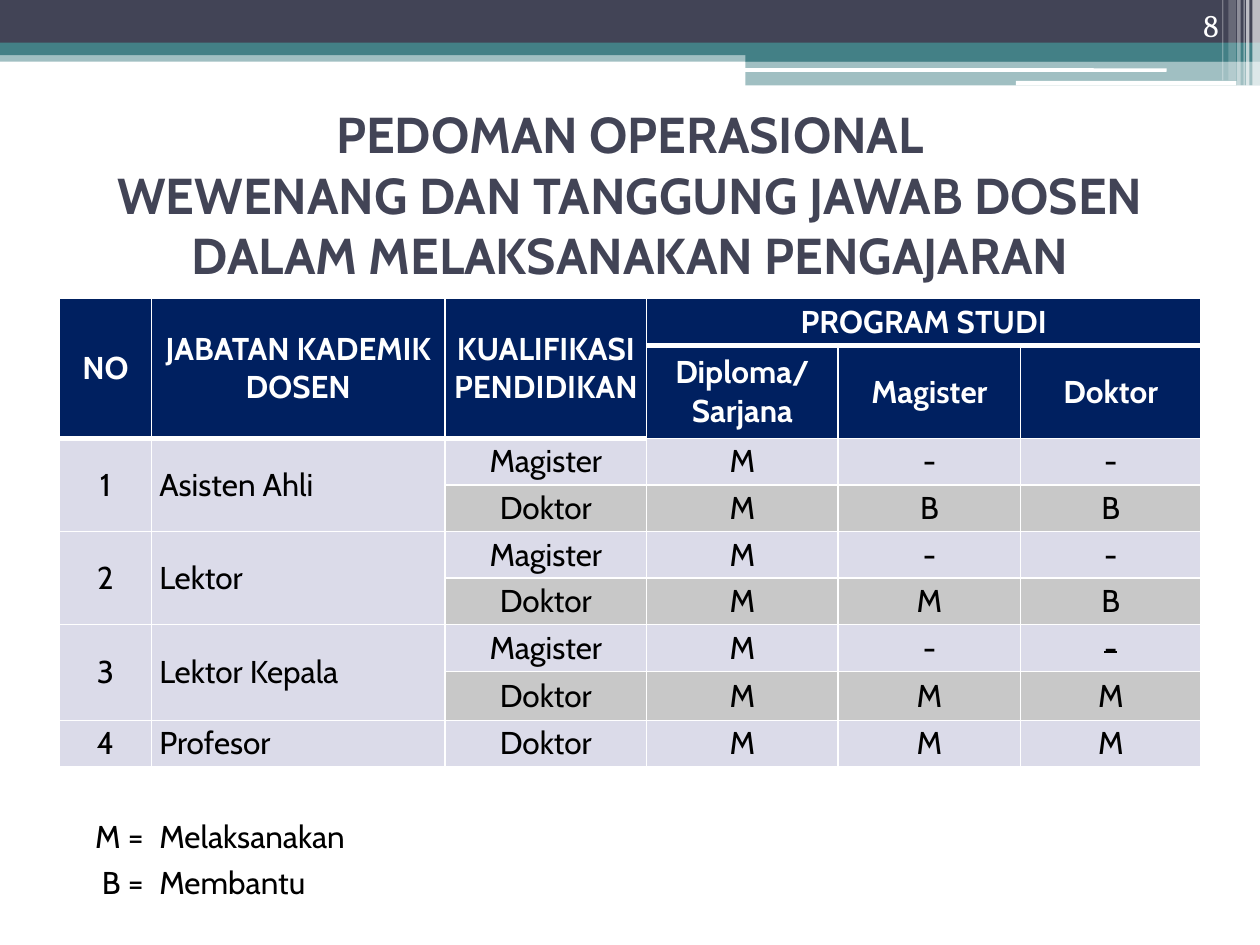
from lxml.etree import SubElement
from pptx import Presentation
from pptx.dml.color import RGBColor
from pptx.enum.shapes import MSO_SHAPE as Shape
from pptx.enum.text import MSO_ANCHOR as Anchor, PP_ALIGN as Align
from pptx.oxml.ns import qn
from pptx.util import Pt

WHITE, NAVY, LILAC, GREY = "FFFFFF", "002060", "DBDBE9", "C8C8C8"
SLATE, TEAL, BLACK = "424456", "438086", "000000"

TITLE = ("PEDOMAN OPERASIONAL\v"
         "WEWENANG DAN TANGGUNG JAWAB DOSEN DALAM MELAKSANAKAN PENGAJARAN")
PAGE_NUMBER = "8"
HEADINGS = ["NO", "JABATAN KADEMIK DOSEN", "KUALIFIKASI PENDIDIKAN"]
PROGRAM_HEADING = "PROGRAM STUDI"
PROGRAMS = ["Diploma/\nSarjana", "Magister", "Doktor"]
POSITIONS = [
    ("Asisten Ahli", [("Magister", "M", "-", "-"), ("Doktor", "M", "B", "B")]),
    ("Lektor", [("Magister", "M", "-", "-"), ("Doktor", "M", "M", "B")]),
    ("Lektor Kepala", [("Magister", "M", "-", "-"), ("Doktor", "M", "M", "M")]),
    ("Profesor", [("Doktor", "M", "M", "M")]),
]
STRUCK_CELL = (6, 6)
LEGEND = [("M =", "Melaksanakan", Align.JUSTIFY), ("B =", "Membantu", Align.LEFT)]

COLUMN_WIDTHS = [52.56, 167.76, 115.2, 109.44, 19.44, 84.96, 31.68, 25.2, 32.4, 13.68]
ROW_HEIGHTS = [26.64, 53.28] + [26.64] * 5 + [28.08] + [26.64] * 4
DATA_COLUMNS = [(2, 1), (3, 1), (4, 2), (6, 4)]

BANDS = [
    (0, 28.8, 720, 6.5, TEAL, 50),
    (0, 0, 720, 24.5, SLATE, 100),
    (0, 24.4, 720, 7.2, TEAL, 100),
    (426, 28, 294, 7.2, TEAL, 100),
    (426, 34.9, 294, 14, TEAL, 50),
]
HIGHLIGHTS = [(425.5, 39, 241.2, 2), (580.5, 46.2, 126, 2.6)]
STRIPES = [(715.7, 4.3, 49, 65), (712, 2, 49, 65), (710.6, 0.7, 49, 60),
           (707, 2, 49, 40), (702, 4.3, 46, 20), (698.4, 0.7, 46, 30)]


def rgb(color):
    """Turn a hex string into a colour."""
    return RGBColor.from_string(color)


def add_bar(slide, kind, left, top, width, height, color, opacity=100):
    """Add a plain filled bar."""
    bar = slide.shapes.add_shape(kind, Pt(left), Pt(top), Pt(width), Pt(height))
    bar.shadow.inherit = False
    bar.line.fill.background()
    bar.fill.solid()
    bar.fill.fore_color.rgb = rgb(color)
    if opacity < 100:
        tint = bar._element.spPr.find(qn("a:solidFill"))[0]
        SubElement(tint, qn("a:alpha"), val=str(opacity * 1000))


def style_text(frame, size, face, color, bold, align):
    """Give every paragraph of a frame the same font and alignment."""
    for paragraph in frame.paragraphs:
        paragraph.alignment = align
        font = paragraph.font
        font.size, font.name, font.bold = Pt(size), face, bold
        font.color.rgb = rgb(color)


def add_text(slide, text, box, anchor, *style):
    """Add a wrapped text box."""
    frame = slide.shapes.add_textbox(*map(Pt, box)).text_frame
    frame.word_wrap = True
    frame.vertical_anchor = anchor
    frame.text = text
    style_text(frame, *style)


def prepare_cell(cell, bottom_width):
    """Clear a cell's fill and margins and draw its white borders."""
    cell.fill.background()
    cell.margin_left = cell.margin_right = Pt(4.5)
    cell.margin_top = cell.margin_bottom = 0
    cell.vertical_anchor = Anchor.MIDDLE
    properties = cell._tc.get_or_add_tcPr()
    edges = [("a:lnL", 1), ("a:lnR", 1), ("a:lnT", 1), ("a:lnB", bottom_width)]
    for index, (edge, width) in enumerate(edges):
        line = SubElement(properties, qn(edge), w=str(Pt(width)))
        SubElement(SubElement(line, qn("a:solidFill")), qn("a:srgbClr"), val=WHITE)
        properties.insert(index, line)


def fill_cell(table, row, column, text="", fill=None, rows=1, columns=1,
              align=Align.CENTER):
    """Write one cell, merged over the given rows and columns."""
    cell = table.cell(row, column)
    if rows * columns > 1:
        cell.merge(table.cell(row + rows - 1, column + columns - 1))
    if fill:
        cell.fill.solid()
        cell.fill.fore_color.rgb = rgb(fill)
    cell.text = text
    heading = fill == NAVY
    style_text(cell.text_frame, 18, "Cabin", WHITE if heading else BLACK, heading, align)


def add_duties(slide):
    """Add the table of duties with its legend rows."""
    table = slide.shapes.add_table(
        len(ROW_HEIGHTS), len(COLUMN_WIDTHS), Pt(34), Pt(170.64),
        Pt(sum(COLUMN_WIDTHS)), Pt(sum(ROW_HEIGHTS))).table
    table.first_row = table.horz_banding = False
    for column, width in zip(table.columns, COLUMN_WIDTHS):
        column.width = Pt(width)
    for r, height in enumerate(ROW_HEIGHTS):
        table.rows[r].height = Pt(height)
        for c in range(len(COLUMN_WIDTHS)):
            prepare_cell(table.cell(r, c), 3 if r == 0 or (r == 1 and c < 3) else 1)

    for c, heading in enumerate(HEADINGS):
        fill_cell(table, 0, c, heading, NAVY, rows=2)
    fill_cell(table, 0, 3, PROGRAM_HEADING, NAVY, columns=7)
    for (c, span), program in zip(DATA_COLUMNS[1:], PROGRAMS):
        fill_cell(table, 1, c, program, NAVY, columns=span)

    row = 2
    for number, (position, duties) in enumerate(POSITIONS, 1):
        fill_cell(table, row, 0, str(number), LILAC, rows=len(duties))
        fill_cell(table, row, 1, position, LILAC, rows=len(duties), align=Align.LEFT)
        for values, fill in zip(duties, (LILAC, GREY)):
            for (c, span), value in zip(DATA_COLUMNS, values):
                fill_cell(table, row, c, value, fill, columns=span)
            row += 1
    struck = table.cell(*STRUCK_CELL).text_frame.paragraphs[0].runs[0]
    struck._r.get_or_add_rPr().set("strike", "sngStrike")

    fill_cell(table, row, 1, columns=9)
    for r, (mark, meaning, align) in enumerate(LEGEND, row + 1):
        fill_cell(table, r, 0, mark, align=Align.RIGHT)
        fill_cell(table, r, 1, meaning, columns=4, align=align)
        fill_cell(table, r, 5, columns=2)


def main():
    """Build the slide and save it."""
    deck = Presentation()
    deck.slide_width, deck.slide_height = Pt(720), Pt(540)
    slide = deck.slides.add_slide(deck.slide_layouts[6])
    for band in BANDS:
        add_bar(slide, Shape.RECTANGLE, *band)
    for highlight in HIGHLIGHTS:
        add_bar(slide, Shape.ROUNDED_RECTANGLE, *highlight, WHITE)
    for left, width, height, opacity in STRIPES:
        add_bar(slide, Shape.RECTANGLE, left, 0, width, height, WHITE, opacity)
    add_duties(slide)
    add_text(slide, TITLE, (36, 69, 648, 84), Anchor.MIDDLE,
             28.8, "Cabin", SLATE, True, Align.CENTER)
    add_text(slide, PAGE_NUMBER, (643.7, 0, 59.8, 28.8), Anchor.BOTTOM,
             18, "Cambria", WHITE, False, Align.RIGHT)
    deck.save("out.pptx")


if __name__ == "__main__":
    main()
